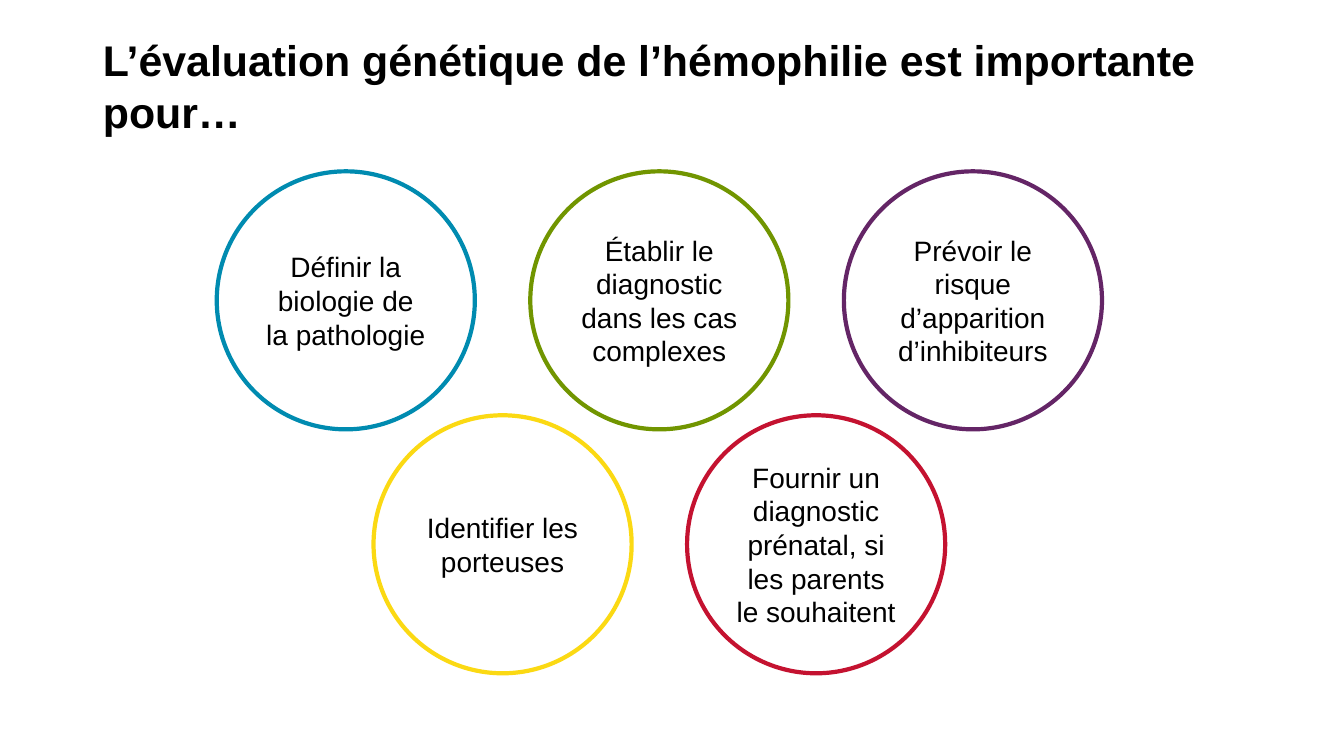
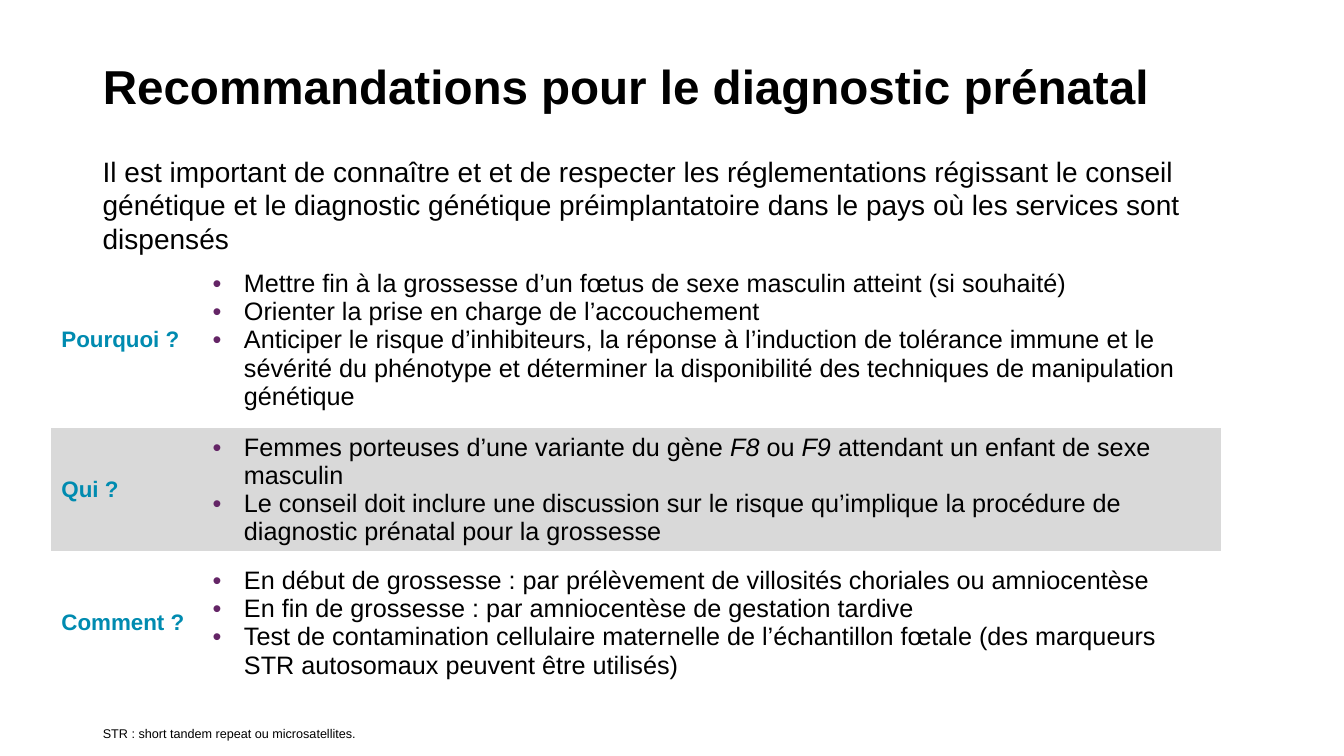
from dataclasses import dataclass

from lxml.etree import SubElement
from pptx import Presentation
from pptx.dml.color import RGBColor
from pptx.enum.shapes import MSO_SHAPE
from pptx.enum.text import MSO_ANCHOR, MSO_AUTO_SIZE, PP_ALIGN
from pptx.oxml.ns import qn
from pptx.util import Inches, Pt


@dataclass(frozen=True)
class Theme:
    font: str = "Arial"
    black: str = "000000"
    white: str = "FFFFFF"
    grey: str = "D9D9D9"
    blue: str = "008BB0"
    green: str = "719500"
    purple: str = "642566"
    yellow: str = "FBD913"
    red: str = "C41230"
    title_size: float = 34
    long_title_size: float = 30.6
    text_size: float = 20
    table_size: float = 18
    label_size: float = 16
    note_size: float = 9
    outline: float = 3


THEME = Theme()
NO_TABLE_STYLE = "{2D5ABB26-0587-4C30-8999-92F81FD0307C}"
TITLE_ONLY, TITLE_AND_CONTENT = 5, 1
MARGIN = 0.92


def place(shape, left, top, width, height):
    shape.left, shape.top = Inches(left), Inches(top)
    shape.width, shape.height = Inches(width), Inches(height)


class Deck:
    def __init__(self, theme):
        self.theme = theme
        self.presentation = Presentation()
        self.presentation.slide_width = Inches(13.33)
        self.presentation.slide_height = Inches(7.5)
        self.slide = None

    def fill_paragraph(self, paragraph, text, size, color=None, bold=False,
                       alignment=PP_ALIGN.LEFT):
        """Add text run by run; parts between underscores become italic."""
        paragraph.alignment = alignment
        paragraph.space_before = Pt(0)
        for index, part in enumerate(text.split("_")):
            run = paragraph.add_run()
            run.text = part
            run.font.name = self.theme.font
            run.font.size = Pt(size)
            run.font.bold = bold
            run.font.italic = index % 2 == 1
            run.font.color.rgb = RGBColor.from_string(color or self.theme.black)

    def add_slide(self, layout, title, size, width):
        layouts = self.presentation.slide_layouts
        self.slide = self.presentation.slides.add_slide(layouts[layout])
        shape = self.slide.shapes.title
        place(shape, MARGIN, 0.25, width, 1.19)
        frame = shape.text_frame
        frame.auto_size = MSO_AUTO_SIZE.NONE
        frame.vertical_anchor = MSO_ANCHOR.MIDDLE
        self.fill_paragraph(frame.paragraphs[0], title, size, bold=True)

    def add_circle(self, left, top, diameter, text, color):
        shape = self.slide.shapes.add_shape(
            MSO_SHAPE.OVAL, Inches(left), Inches(top),
            Inches(diameter), Inches(diameter))
        shape.shadow.inherit = False
        shape.fill.solid()
        shape.fill.fore_color.rgb = RGBColor.from_string(self.theme.white)
        shape.line.color.rgb = RGBColor.from_string(color)
        shape.line.width = Pt(self.theme.outline)
        frame = shape.text_frame
        frame.word_wrap = True
        frame.vertical_anchor = MSO_ANCHOR.MIDDLE
        self.fill_paragraph(frame.paragraphs[0], text, self.theme.text_size,
                            alignment=PP_ALIGN.CENTER)

    def add_text(self, left, top, width, height, text):
        shape = self.slide.shapes.add_textbox(
            Inches(left), Inches(top), Inches(width), Inches(height))
        frame = shape.text_frame
        frame.word_wrap = True
        frame.auto_size = MSO_AUTO_SIZE.SHAPE_TO_FIT_TEXT
        self.fill_paragraph(frame.paragraphs[0], text, self.theme.text_size)

    def add_footnote(self, text):
        shape = self.slide.placeholders[1]
        place(shape, MARGIN, 6.95, 10.85, 0.4)
        frame = shape.text_frame
        frame.auto_size = MSO_AUTO_SIZE.NONE
        frame.vertical_anchor = MSO_ANCHOR.BOTTOM
        frame.margin_bottom = 0
        paragraph = frame.paragraphs[0]
        properties = paragraph._p.get_or_add_pPr()
        properties.set("marL", "0")
        properties.set("indent", "0")
        SubElement(properties, qn("a:buNone"))
        self.fill_paragraph(paragraph, text, self.theme.note_size)

    def add_bullet(self, paragraph, text):
        indent = Inches(0.31)
        properties = paragraph._p.get_or_add_pPr()
        properties.set("marL", str(indent))
        properties.set("indent", str(-indent))
        color = SubElement(properties, qn("a:buClr"))
        SubElement(color, qn("a:srgbClr"), val=self.theme.purple)
        SubElement(properties, qn("a:buFont"), typeface=self.theme.font)
        SubElement(properties, qn("a:buChar"), char="•")
        self.fill_paragraph(paragraph, text, self.theme.table_size)

    def add_question_table(self, left, top, widths, heights, rows):
        """Add a table with a label and a bullet list in each row."""
        frame = self.slide.shapes.add_table(
            len(rows), len(widths), Inches(left), Inches(top),
            Inches(sum(widths)), Inches(sum(heights)))
        table = frame.table
        table.first_row = table.horz_banding = False
        table._tbl.tblPr.find(qn("a:tableStyleId")).text = NO_TABLE_STYLE
        for column, width in zip(table.columns, widths):
            column.width = Inches(width)
        for index, (label, items) in enumerate(rows):
            row = table.rows[index]
            row.height = Inches(heights[index])
            fill = self.theme.grey if index % 2 else self.theme.white
            for cell in row.cells:
                cell.fill.solid()
                cell.fill.fore_color.rgb = RGBColor.from_string(fill)
                cell.vertical_anchor = MSO_ANCHOR.MIDDLE
            label_cell, list_cell = row.cells
            self.fill_paragraph(label_cell.text_frame.paragraphs[0], label,
                                self.theme.label_size, self.theme.blue,
                                bold=True)
            list_frame = list_cell.text_frame
            for number, item in enumerate(items):
                paragraph = (list_frame.add_paragraph() if number
                             else list_frame.paragraphs[0])
                self.add_bullet(paragraph, item)


def add_reasons_slide(deck):
    theme = deck.theme
    deck.add_slide(
        TITLE_ONLY,
        "L’évaluation génétique de l’hémophilie est importante pour…",
        theme.long_title_size, 12.11)
    circle_rows = [
        [("Définir la biologie de la pathologie", theme.blue),
         ("Établir le diagnostic dans les cas complexes", theme.green),
         ("Prévoir le risque d’apparition d’inhibiteurs", theme.purple)],
        [("Identifier les porteuses", theme.yellow),
         ("Fournir un diagnostic prénatal, si les parents le souhaitent",
          theme.red)],
    ]
    step = 3.11
    for row, circles in enumerate(circle_rows):
        for column, (text, color) in enumerate(circles):
            deck.add_circle(2.15 + step * (column + row / 2),
                            1.7 + 2.42 * row, 2.56, text, color)


def add_recommendations_slide(deck):
    deck.add_slide(TITLE_AND_CONTENT,
                   "Recommandations pour le diagnostic prénatal",
                   deck.theme.title_size, 11.5)
    deck.add_question_table(0.51, 2.5, [1.5, 10.1], [1.75, 1.21, 1.42], [
        ("Pourquoi ?", [
            "Mettre fin à la grossesse d’un fœtus de sexe masculin atteint "
            "(si souhaité)",
            "Orienter la prise en charge de l’accouchement",
            "Anticiper le risque d’inhibiteurs, la réponse à l’induction de "
            "tolérance immune et le sévérité du phénotype et déterminer la "
            "disponibilité des techniques de manipulation génétique",
        ]),
        ("Qui ?", [
            "Femmes porteuses d’une variante du gène _F8_ ou _F9_ attendant "
            "un enfant de sexe masculin",
            "Le conseil doit inclure une discussion sur le risque "
            "qu’implique la procédure de diagnostic prénatal pour la "
            "grossesse",
        ]),
        ("Comment ?", [
            "En début de grossesse : par prélèvement de villosités choriales "
            "ou amniocentèse",
            "En fin de grossesse : par amniocentèse de gestation tardive",
            "Test de contamination cellulaire maternelle de l’échantillon "
            "fœtale (des marqueurs STR autosomaux peuvent être utilisés)",
        ]),
    ])
    deck.add_footnote("STR : short tandem repeat ou microsatellites.")
    deck.add_text(
        MARGIN, 1.48, 11.2, 1.11,
        "Il est important de connaître et et de respecter les "
        "réglementations régissant le conseil génétique et le diagnostic "
        "génétique préimplantatoire dans le pays où les services sont "
        "dispensés")


def main():
    deck = Deck(THEME)
    add_reasons_slide(deck)
    add_recommendations_slide(deck)
    deck.presentation.save("out.pptx")


if __name__ == "__main__":
    main()
